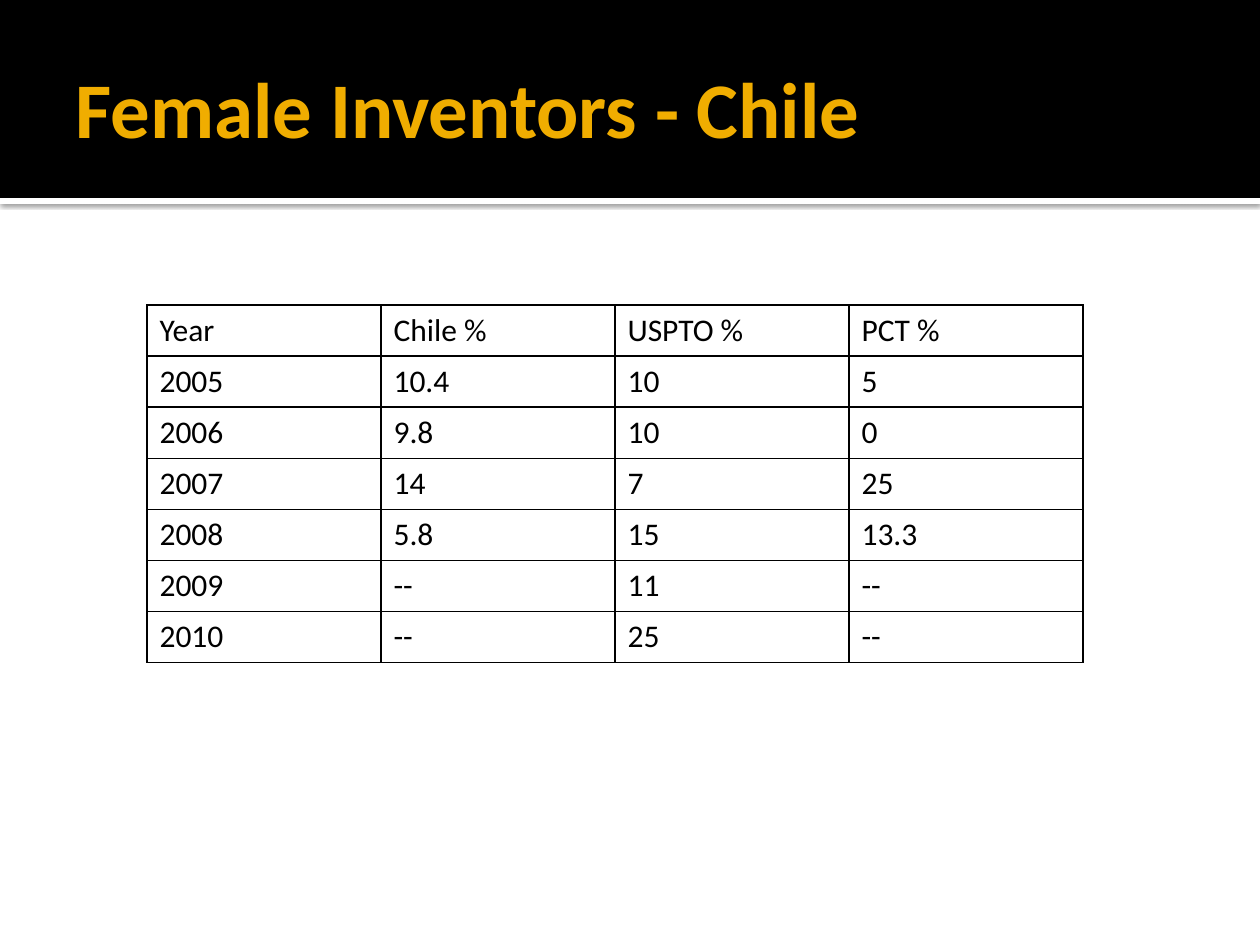
"""Build a slide with a table of the share of female inventors in Chile."""
from lxml.etree import SubElement
from pptx import Presentation
from pptx.dml.color import RGBColor
from pptx.enum.text import MSO_ANCHOR, MSO_AUTO_SIZE, PP_ALIGN
from pptx.enum.shapes import MSO_SHAPE
from pptx.oxml.ns import qn
from pptx.util import Emu, Pt

TITLE = "Female Inventors - Chile"
ROWS = [
    ("Year", "Chile %", "USPTO %", "PCT %"),
    ("2005", "10.4", "10", "5"),
    ("2006", "9.8", "10", "0"),
    ("2007", "14", "7", "25"),
    ("2008", "5.8", "15", "13.3"),
    ("2009", "--", "11", "--"),
    ("2010", "--", "25", "--"),
]
BLACK = RGBColor(0x00, 0x00, 0x00)
WHITE = RGBColor(0xFF, 0xFF, 0xFF)
GOLD = RGBColor(0xF0, 0xAD, 0x00)
FONT = "Calibri"
WIDE, HIGH = 1260, 945
BAND, RULE = 198, 6
LEFT, TOP, COL, ROW = 147, 305, 234, 51


def px(*nums):
    return [Emu(round(num * 914400 / 126)) for num in nums]


def style(frame, size, color, bold=False):
    for run in frame.paragraphs[0].runs:
        font = run.font
        font.name, font.size, font.bold = FONT, Pt(size), bold
        font.color.rgb = color


def add_bar(slide, top, high, color):
    bar = slide.shapes.add_shape(MSO_SHAPE.RECTANGLE, *px(0, top, WIDE, high))
    bar.shadow.inherit = False
    bar.fill.solid()
    bar.fill.fore_color.rgb = color
    bar.line.fill.background()
    return bar


def add_shade(bar):
    effects = bar._element.spPr.find(qn("a:effectLst"))
    shade = SubElement(effects, qn("a:outerShdw"), blurRad=str(Pt(2.5)),
                       dist=str(Pt(0.8)), dir="5400000", rotWithShape="0")
    color = SubElement(shade, qn("a:srgbClr"), val=str(BLACK))
    SubElement(color, qn("a:alpha"), val="60000")


def add_edges(cell):
    props = cell._tc.get_or_add_tcPr()
    for side in ("lnL", "lnR", "lnT", "lnB"):
        line = SubElement(props, qn(f"a:{side}"), w=str(Pt(1)))
        fill = SubElement(line, qn("a:solidFill"))
        SubElement(fill, qn("a:srgbClr"), val=str(BLACK))


def set_title(slide):
    title = slide.shapes.title
    title.left, title.top, title.width, title.height = px(63, 21, 1134, 173)
    frame = title.text_frame
    frame.text = TITLE
    frame.auto_size = MSO_AUTO_SIZE.NONE
    frame.vertical_anchor = MSO_ANCHOR.MIDDLE
    frame.margin_left, frame.margin_right = px(13, 6)
    frame.paragraphs[0].alignment = PP_ALIGN.LEFT
    style(frame, 45, GOLD, True)
    slide.shapes._spTree.append(title._element)


def add_grid(slide):
    rows, cols = len(ROWS), len(ROWS[0])
    box = px(LEFT, TOP, cols * COL, rows * ROW)
    table = slide.shapes.add_table(rows, cols, *box).table
    table.first_row = table.horz_banding = False
    for r, row in enumerate(ROWS):
        for c, text in enumerate(row):
            cell = table.cell(r, c)
            cell.text_frame.text = text
            style(cell.text_frame, 18, BLACK)
            add_edges(cell)
            cell.fill.background()


def main():
    deck = Presentation()
    deck.slide_width, deck.slide_height = px(WIDE, HIGH)
    slide = deck.slides.add_slide(deck.slide_layouts[5])
    add_shade(add_bar(slide, BAND, RULE, WHITE))
    add_bar(slide, 0, BAND, BLACK)
    set_title(slide)
    add_grid(slide)
    deck.save("out.pptx")


if __name__ == "__main__":
    main()
